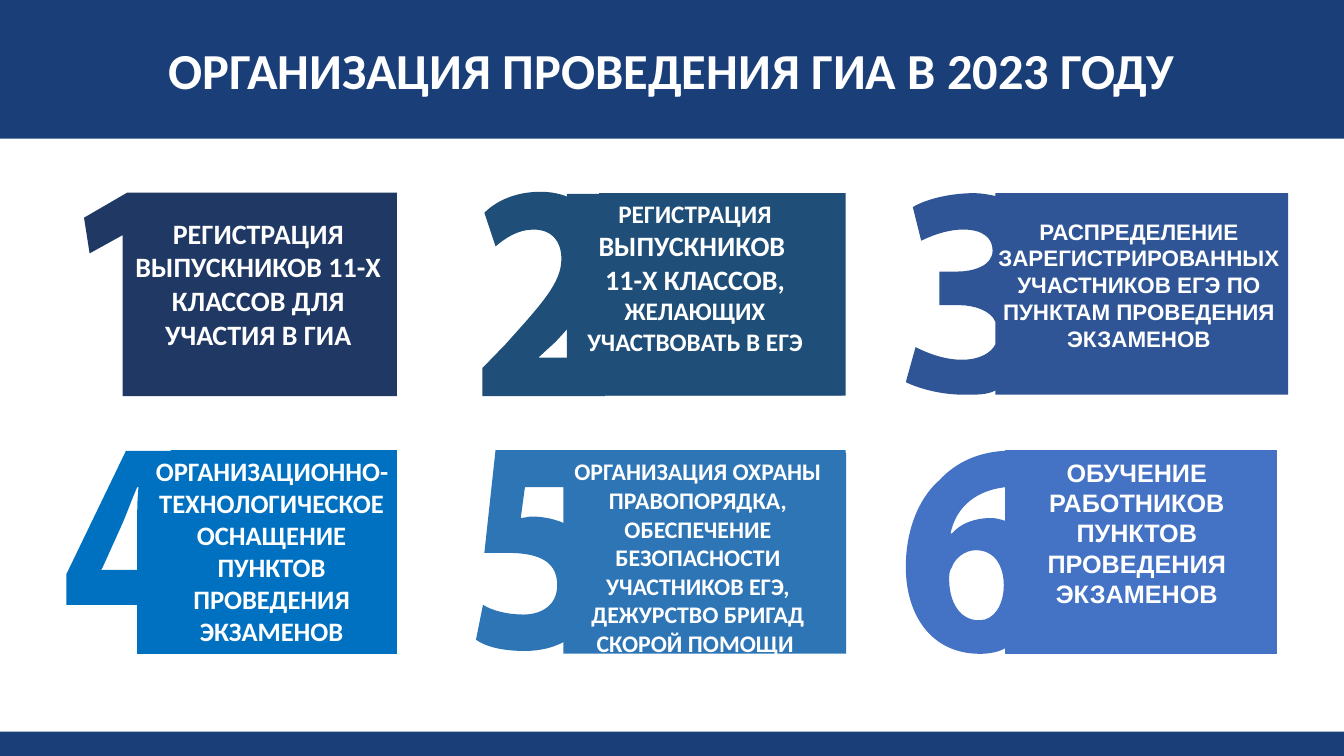
"""Build a slide with six numbered steps of the 2023 state exams."""
from lxml.etree import Element
from pptx import Presentation
from pptx.dml.color import RGBColor as Rgb
from pptx.enum.shapes import MSO_SHAPE as Shape
from pptx.enum.text import MSO_ANCHOR as Anchor, MSO_AUTO_SIZE as Auto, PP_ALIGN as Align
from pptx.oxml.ns import qn
from pptx.util import Pt

WHITE = Rgb(0xFF, 0xFF, 0xFF)
NAVY = Rgb(0x1A, 0x3E, 0x78)
INK = Rgb(0x20, 0x38, 0x64)
TEAL = Rgb(0x1F, 0x4E, 0x79)
ROYAL = Rgb(0x2F, 0x55, 0x97)
AZURE = Rgb(0x00, 0x70, 0xC0)
STEEL = Rgb(0x2E, 0x75, 0xB6)
BLUE = Rgb(0x44, 0x72, 0xC4)

ONE = [[(114, 137.5), (91, 137.5), (60, 155.5), (64, 181), (87.5, 168),
        (87.5, 283), (283.5, 283), (283.5, 137.5)]]
TWO = [[(604, 138), (428, 138), (428, 166), (422, 148, 408, 137, 386, 137),
        (369, 137, 355, 143, 346, 152), (354, 176),
        (361, 170, 370, 164, 381, 164), (395, 164, 401, 173, 401, 185),
        (401, 202, 387, 217, 361, 246), (344.5, 263), (344.5, 283), (432, 283),
        (432, 282.5), (604, 282.5)],
       [(385, 255), (397, 244), (410, 230, 423, 215, 428, 198), (428, 255.5),
        (385, 255.5)]]
THREE = [[(711, 138), (711, 140), (706, 139, 701, 138, 696, 138),
          (677, 138, 660, 143, 652, 148), (658, 172),
          (664, 169, 676, 164, 688, 164), (702, 164, 709, 170, 709, 179),
          (709, 190, 695, 194, 684, 194), (671, 194), (671, 218), (685, 218),
          (696, 218, 708, 222, 711, 230), (711, 246),
          (708, 252, 700, 257, 687, 257), (673, 257, 660, 251, 654, 248),
          (647, 273), (655, 277, 671, 282, 689, 282),
          (698, 282, 705, 282, 711, 279), (711, 282), (920, 282), (920, 138)]]
FOUR = [[(122, 321.5), (122, 322), (90, 322), (47.5, 410), (47.5, 432),
         (98, 432), (98, 467), (283.5, 467), (283.5, 321.5)],
        [(98, 375), (98, 407), (72, 407), (73, 406), (87, 375),
         (91, 366, 94, 357, 98, 348), (99, 348), (98, 357, 98, 366, 98, 375)]]
FIVE = [[(422, 321.5), (354, 321.5), (346, 395), (351, 395, 356, 395, 363, 395),
         (388, 395, 398, 403, 398, 418), (398, 433, 386, 439, 374, 439),
         (362, 439, 351, 436, 345, 432), (340, 457),
         (347, 462, 359, 465, 375, 465), (397, 465, 413, 455, 422, 441),
         (422, 465), (604, 465), (604, 321.5)],
        [(413, 380), (405, 373, 392, 369, 380, 369),
         (377, 369, 375, 370, 372, 370), (375, 348), (422, 348), (422, 390),
         (420, 386, 417, 382, 413, 380)]]
SIX = [[(718, 321.5), (718, 322), (699, 323, 683, 330, 671, 343),
        (656, 356, 647, 379, 647, 405), (647, 439, 665, 467, 700, 467),
        (706, 467, 713, 466, 718, 463), (718, 467), (912, 467), (912, 321.5)],
       [(700, 443), (699, 443), (685, 443, 678, 429, 678, 414),
        (678, 410, 678, 408, 680, 405), (682, 399, 689, 393, 697, 393),
        (711, 393, 717, 405, 717, 418), (717, 432, 710, 443, 700, 443)],
       [(708, 370), (696, 370, 686, 374, 680, 381), (679, 381),
        (682, 366, 693, 351, 718, 348), (718, 372),
        (715, 371, 711, 370, 708, 370)]]

TITLE = [[("ОРГАНИЗАЦИЯ ПРОВЕДЕНИЯ ГИА В 2023 ГОДУ", 36)]]
LABELS = [
    ((85.5, 151, 198, 126), "Calibri",
     [[("РЕГИСТРАЦИЯ ВЫПУСКНИКОВ 11-Х КЛАССОВ ДЛЯ УЧАСТИЯ В ГИА", 20)]]),
    ((402, 138, 189, 121), "Calibri",
     [[("РЕГИСТРАЦИЯ ", 18), ("ВЫПУСКНИКОВ ", 20)],
      [("11-Х КЛАССОВ,", 20)],
      [("ЖЕЛАЮЩИХ УЧАСТВОВАТЬ В ЕГЭ", 18)]]),
    ((698, 152, 231, 122), "Arial",
     [[("РАСПРЕДЕЛЕНИЕ ЗАРЕГИСТРИРОВАННЫХ УЧАСТНИКОВ ЕГЭ ПО ПУНКТАМ "
        "ПРОВЕДЕНИЯ ЭКЗАМЕНОВ", 16)]]),
    ((95.5, 321.5, 197, 145), "Calibri",
     [[("ОРГАНИЗАЦИОННО-ТЕХНОЛОГИЧЕСКОЕ ОСНАЩЕНИЕ ПУНКТОВ ПРОВЕДЕНИЯ "
        "ЭКЗАМЕНОВ", 19)]]),
    ((712, 323, 200, 138), "Arial",
     [[("ОБУЧЕНИЕ РАБОТНИКОВ ПУНКТОВ ПРОВЕДЕНИЯ ЭКЗАМЕНОВ", 18)]]),
    ((391.5, 323, 214, 151), "Calibri",
     [[("ОРГАНИЗАЦИЯ ОХРАНЫ ПРАВОПОРЯДКА, ОБЕСПЕЧЕНИЕ БЕЗОПАСНОСТИ "
        "УЧАСТНИКОВ ЕГЭ, ДЕЖУРСТВО БРИГАД СКОРОЙ ПОМОЩИ ", 17)]]),
]


def paint(shape, color):
    """Give a shape a flat fill with no line or shadow."""
    shape.fill.solid()
    shape.fill.fore_color.rgb = color
    shape.line.fill.background()
    shape.shadow.inherit = False
    return shape


def add_rect(slide, area, color):
    """Add a plain rectangle."""
    return paint(slide.shapes.add_shape(Shape.RECTANGLE, *map(Pt, area)), color)


def bend(shape, nodes):
    """Turn the segments that have control points into cubic curves."""
    for seg, node in zip(list(shape.element.iter(qn("a:lnTo"))), nodes):
        if len(node) == 6:
            seg.tag = qn("a:cubicBezTo")
            for slot in (0, 1):
                x, y = map(Pt, node[2 * slot:2 * slot + 2])
                seg.insert(slot, Element(qn("a:pt"), x=str(x - shape.left),
                                         y=str(y - shape.top)))


def add_digit(slide, loops, color):
    """Add a card whose left edge forms a digit."""
    pen = None
    for loop in loops:
        first, *rest = [tuple(map(Pt, node[-2:])) for node in loop]
        if pen is None:
            pen = slide.shapes.build_freeform(*first, scale=1.0)
        else:
            pen.move_to(*first)
        pen.add_line_segments(rest, close=True)
    shape = paint(pen.convert_to_shape(), color)
    bend(shape, [node for loop in loops for node in loop[1:]])


def write(frame, lines, face):
    """Fill a text frame with bold white centred lines."""
    frame.word_wrap = True
    for index, runs in enumerate(lines):
        para = frame.add_paragraph() if index else frame.paragraphs[0]
        para.alignment = Align.CENTER
        font = para.font
        font.name, font.bold, font.size = face, True, Pt(runs[0][1])
        font.color.rgb = WHITE
        for text, size in runs:
            run = para.add_run()
            run.text = text
            if size != runs[0][1]:
                run.font.size = Pt(size)


def add_label(slide, area, face, lines):
    """Add a text box that grows with its text."""
    frame = slide.shapes.add_textbox(*map(Pt, area)).text_frame
    write(frame, lines, face)
    frame.auto_size = Auto.SHAPE_TO_FIT_TEXT


def main():
    """Build and save the slide."""
    deck = Presentation()
    deck.slide_width, deck.slide_height = Pt(960), Pt(540)
    slide = deck.slides.add_slide(deck.slide_layouts[6])
    add_rect(slide, (0, 522.5, 960, 17.5), NAVY)
    add_digit(slide, TWO, TEAL)
    add_rect(slide, (405, 138.5, 196, 144), TEAL)
    add_digit(slide, ONE, INK)
    add_digit(slide, THREE, ROYAL)
    add_digit(slide, FOUR, AZURE)
    add_rect(slide, (402.5, 323.5, 202, 143.5), STEEL)
    add_digit(slide, FIVE, STEEL)
    add_digit(slide, SIX, BLUE)
    head = add_rect(slide, (0, 0, 960, 99), NAVY).text_frame
    head.vertical_anchor = Anchor.MIDDLE
    write(head, TITLE, "Calibri")
    for label in LABELS:
        add_label(slide, *label)
    deck.save("out.pptx")


if __name__ == "__main__":
    main()
